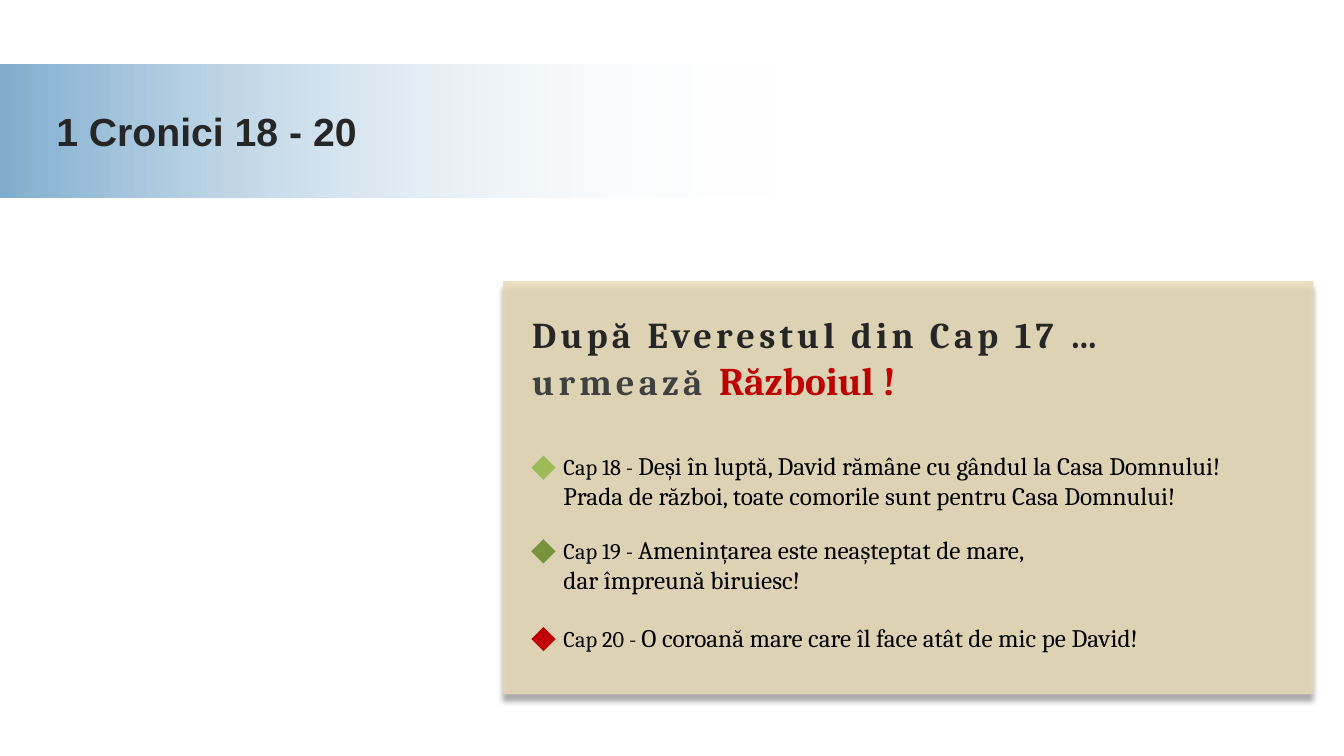
from dataclasses import dataclass

from lxml.etree import SubElement
from pptx import Presentation
from pptx.dml.color import RGBColor
from pptx.enum.shapes import MSO_SHAPE as Shape
from pptx.oxml.ns import qn
from pptx.util import Inches, Pt


@dataclass(frozen=True)
class Theme:
    """Colours, fonts and type sizes of the slide."""
    sand: str = "E7DAB7"
    blue: str = "80AED0"
    white: str = "FFFFFF"
    black: str = "000000"
    dark: str = "262626"
    grey: str = "404040"
    lime: str = "9BBB59"
    green: str = "77933C"
    red: str = "C00000"
    sans: str = "Arial"
    serif: str = "Cambria"
    title: int = 28
    heading: int = 26
    body: int = 18
    label: int = 16


THEME = Theme()
CHAPTERS = [
    (1.63, THEME.lime, "Cap 18 - ",
     ["Deși în luptă, David rămâne cu gândul la Casa Domnului!",
      "Prada de război, toate comorile sunt pentru Casa Domnului!"]),
    (2.46, THEME.green, "Cap 19 - ",
     ["Amenințarea este neașteptat de mare,", "dar împreună biruiesc!"]),
    (3.33, THEME.red, "Cap 20 - ",
     ["O coroană mare care îl face atât de mic pe David!"]),
]


def add_block(page, kind, box, color=None):
    """Add a borderless shape, filled when a colour is given."""
    block = page.shapes.add_shape(kind, *map(Inches, box))
    block.shadow.inherit = False
    block.line.fill.background()
    if color:
        block.fill.solid()
        block.fill.fore_color.rgb = RGBColor.from_string(color)
    return block


def set_alpha(color_element, percent):
    """Make a colour element partly transparent."""
    SubElement(color_element, qn("a:alpha"), val=str(percent * 1000))


def add_shadow(block):
    """Give a shape a soft shadow straight below it."""
    effects = block._element.spPr.find(qn("a:effectLst"))
    shadow = SubElement(effects, qn("a:outerShdw"), blurRad=str(Pt(4)), dist=str(Pt(5)),
                        dir="5400000", rotWithShape="0")
    set_alpha(SubElement(shadow, qn("a:srgbClr"), val=THEME.black), 40)


def add_text(page, box, lines, font, bold=False):
    """Add a text box from lines of (text, size, colour, spacing) runs."""
    frame = page.shapes.add_textbox(*map(Inches, box)).text_frame
    frame.word_wrap = True
    for index, line in enumerate(lines):
        para = frame.add_paragraph() if index else frame.paragraphs[0]
        for text, size, color, spacing in line:
            span = para.add_run()
            span.text = text
            span.font.name = font
            span.font.size = Pt(size)
            span.font.bold = bold
            span.font.color.rgb = RGBColor.from_string(color)
            if spacing:
                span.font._element.set("spc", str(spacing * 100))


def add_chapter(page, box, color, label, lines):
    """Draw a diamond marker and the chapter summary beside it."""
    left, top, width, height = box
    add_block(page, Shape.DIAMOND, (left, top + 0.1, 0.24, 0.24), color)
    rows = [[(line, THEME.body, THEME.black, 0)] for line in lines]
    rows[0].insert(0, (label, THEME.label, THEME.black, 0))
    add_text(page, (left + 0.22, top, width - 0.22, height), rows, THEME.serif)


def add_panel(page, box):
    """Draw the sand panel with its heading and chapter list."""
    left, top, width, height = box
    panel = add_block(page, Shape.RECTANGLE, box, THEME.sand)
    set_alpha(panel._element.spPr.find(".//" + qn("a:srgbClr")), 84)
    add_shadow(panel)
    for offset, color, label, lines in CHAPTERS:
        row = (left + 0.28, top + offset, width - 0.41, 0.4 if len(lines) == 1 else 0.71)
        add_chapter(page, row, color, label, lines)
    heading = [
        [("După Everestul din Cap 17 …", THEME.heading, THEME.dark, 3)],
        [("urmează ", THEME.heading, THEME.grey, 3),
         ("Războiul !", THEME.title, THEME.red, 0)],
    ]
    add_text(page, (left + 0.19, top + 0.26, width - 0.32, 1.01), heading, THEME.serif, True)


def add_banner(page, box):
    """Draw the fading blue band and the slide title."""
    left, top, width, height = box
    band = add_block(page, Shape.RECTANGLE, box)
    band.fill.gradient()
    band.fill.gradient_angle = 0
    for stop, color in zip(band.fill.gradient_stops, (THEME.blue, THEME.white)):
        stop.color.rgb = RGBColor.from_string(color)
    set_alpha(band._element.spPr.findall(".//" + qn("a:srgbClr"))[-1], 0)
    title = [[("1 Cronici 18 - 20", THEME.title, THEME.dark, 0)]]
    add_text(page, (left + 0.46, top + 0.38, width - 1.13, 0.57), title, THEME.sans, True)


def main():
    """Build the deck and save it."""
    deck = Presentation()
    deck.slide_width, deck.slide_height = Inches(13.33), Inches(7.5)
    page = deck.slides.add_slide(deck.slide_layouts[6])
    add_panel(page, (4.99, 2.79, 8.04, 4.1))
    add_banner(page, (0, 0.64, 7.72, 1.32))
    deck.save("out.pptx")


if __name__ == "__main__":
    main()
